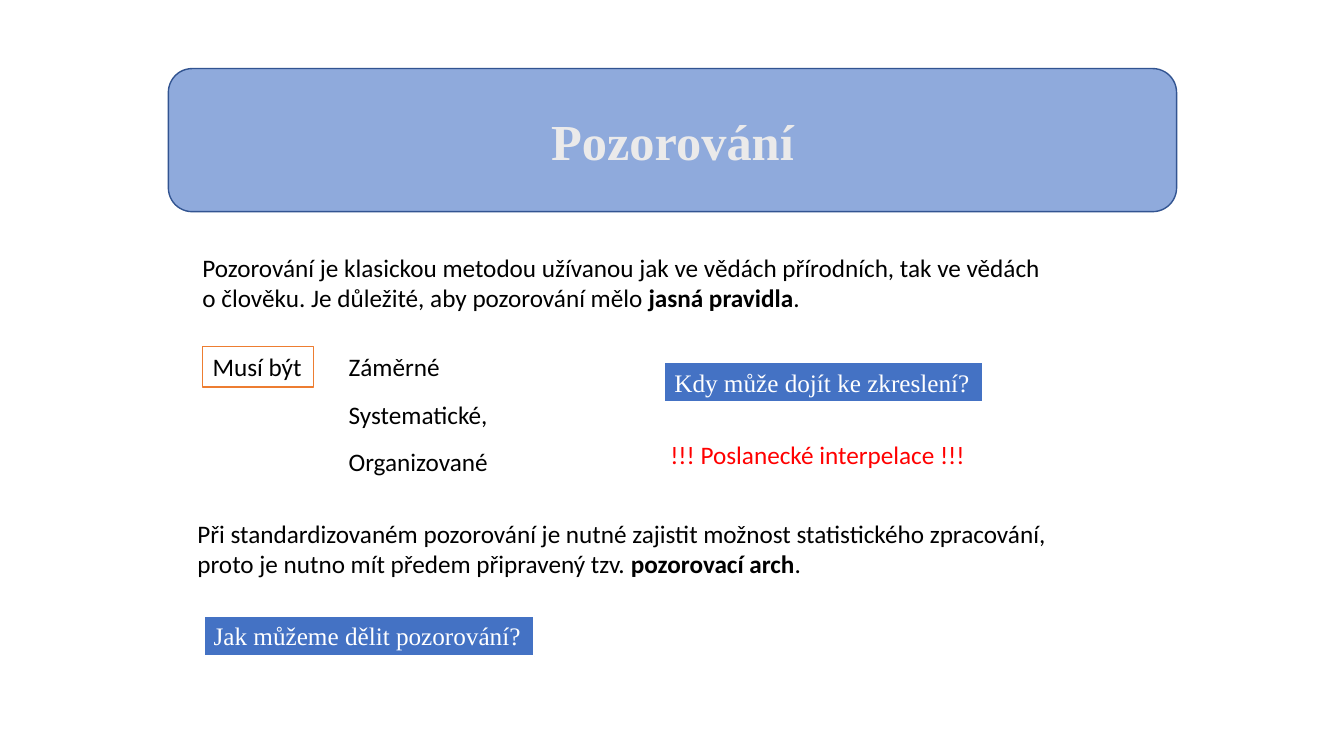
import pptx
import pptx.util
import pptx.dml.color
import pptx.enum.shapes
import pptx.enum.text

Inches = pptx.util.Inches
Pt = pptx.util.Pt
SHAPE = pptx.enum.shapes.MSO_SHAPE
COLORS = {
    "banner": "8FAADC", "banner_line": "325491", "title": "EBEAEA",
    "blue": "4472C4", "orange": "ED7D31", "red": "FF0000",
    "white": "FFFFFF", "black": "000000",
}


def rgb(name):
    return pptx.dml.color.RGBColor.from_string(COLORS[name])


def write(p, text, **font):
    r = p.add_run()
    r.text = text
    values = {"name": "Calibri", "size": Pt(18), "bold": False, "color": "black"} | font
    r.font.color.rgb = rgb(values.pop("color"))
    for key, value in values.items():
        setattr(r.font, key, value)


prs = pptx.Presentation()
prs.slide_width = Inches(13.33)
prs.slide_height = Inches(7.5)
s = prs.slides.add_slide(prs.slide_layouts[6])

sp = s.shapes.add_shape(SHAPE.ROUNDED_RECTANGLE, Inches(1.67), Inches(0.68), Inches(10), Inches(1.42))
sp.shadow.inherit = False
sp.fill.solid()
sp.fill.fore_color.rgb = rgb("banner")
sp.line.color.rgb = rgb("banner_line")
sp.line.width = Pt(1)
tf = sp.text_frame
tf.vertical_anchor = pptx.enum.text.MSO_ANCHOR.MIDDLE
p = tf.paragraphs[0]
p.alignment = pptx.enum.text.PP_ALIGN.CENTER
write(p, "Pozorování", name="Times New Roman", size=Pt(36), bold=True, color="title")

paragraphs = [
    (1.91, 2.45, 8.67,
     "Pozorování je klasickou metodou užívanou jak ve vědách přírodních, tak ve vědách",
     "o člověku. Je důležité, aby pozorování mělo ", "jasná pravidla"),
    (1.86, 5.09, 8.77,
     "Při standardizovaném pozorování je nutné zajistit možnost statistického zpracování,",
     "proto je nutno mít předem připravený tzv. ", "pozorovací arch"),
]
for x, y, w, first, second, key_term in paragraphs:
    sp = s.shapes.add_textbox(Inches(x), Inches(y), Inches(w), Inches(0.71))
    tf = sp.text_frame
    tf.word_wrap = False
    tf.auto_size = pptx.enum.text.MSO_AUTO_SIZE.SHAPE_TO_FIT_TEXT
    write(tf.paragraphs[0], first)
    p = tf.add_paragraph()
    write(p, second)
    write(p, key_term, bold=True)
    write(p, ".")

requirements = [("Záměrné", 1.11), ("Systematické,", 1.59), ("Organizované", 1.6)]
labels = [(3.36, 3.44 + 0.47 * i, w, text, "black") for i, (text, w) in enumerate(requirements)]
labels.append((6.55, 4.31, 3.16, "!!! Poslanecké interpelace !!!", "red"))
for x, y, w, text, color in labels:
    sp = s.shapes.add_textbox(Inches(x), Inches(y), Inches(w), Inches(0.4))
    tf = sp.text_frame
    tf.word_wrap = False
    tf.auto_size = pptx.enum.text.MSO_AUTO_SIZE.SHAPE_TO_FIT_TEXT
    write(tf.paragraphs[0], text, color=color)

question = {"fill": "blue", "line": "white", "width": 1.5, "font": "Times New Roman", "color": "white"}
requirement = {"fill": "white", "line": "orange", "width": 1, "font": "Calibri", "color": "black"}
boxes = [
    (2.01, 3.44, 1.1, "Musí být", requirement),
    (6.59, 3.59, 3.16, "Kdy může dojít ke zkreslení?", question),
    (2.02, 6.11, 3.28, "Jak můžeme dělit pozorování?", question),
]
for x, y, w, text, style in boxes:
    sp = s.shapes.add_shape(SHAPE.RECTANGLE, Inches(x), Inches(y), Inches(w), Inches(0.4))
    sp.shadow.inherit = False
    sp.fill.solid()
    sp.fill.fore_color.rgb = rgb(style["fill"])
    sp.line.color.rgb = rgb(style["line"])
    sp.line.width = Pt(style["width"])
    tf = sp.text_frame
    tf.word_wrap = False
    tf.auto_size = pptx.enum.text.MSO_AUTO_SIZE.SHAPE_TO_FIT_TEXT
    tf.vertical_anchor = pptx.enum.text.MSO_ANCHOR.TOP
    p = tf.paragraphs[0]
    p.alignment = pptx.enum.text.PP_ALIGN.LEFT
    write(p, text, name=style["font"], color=style["color"])

prs.save("out.pptx")
